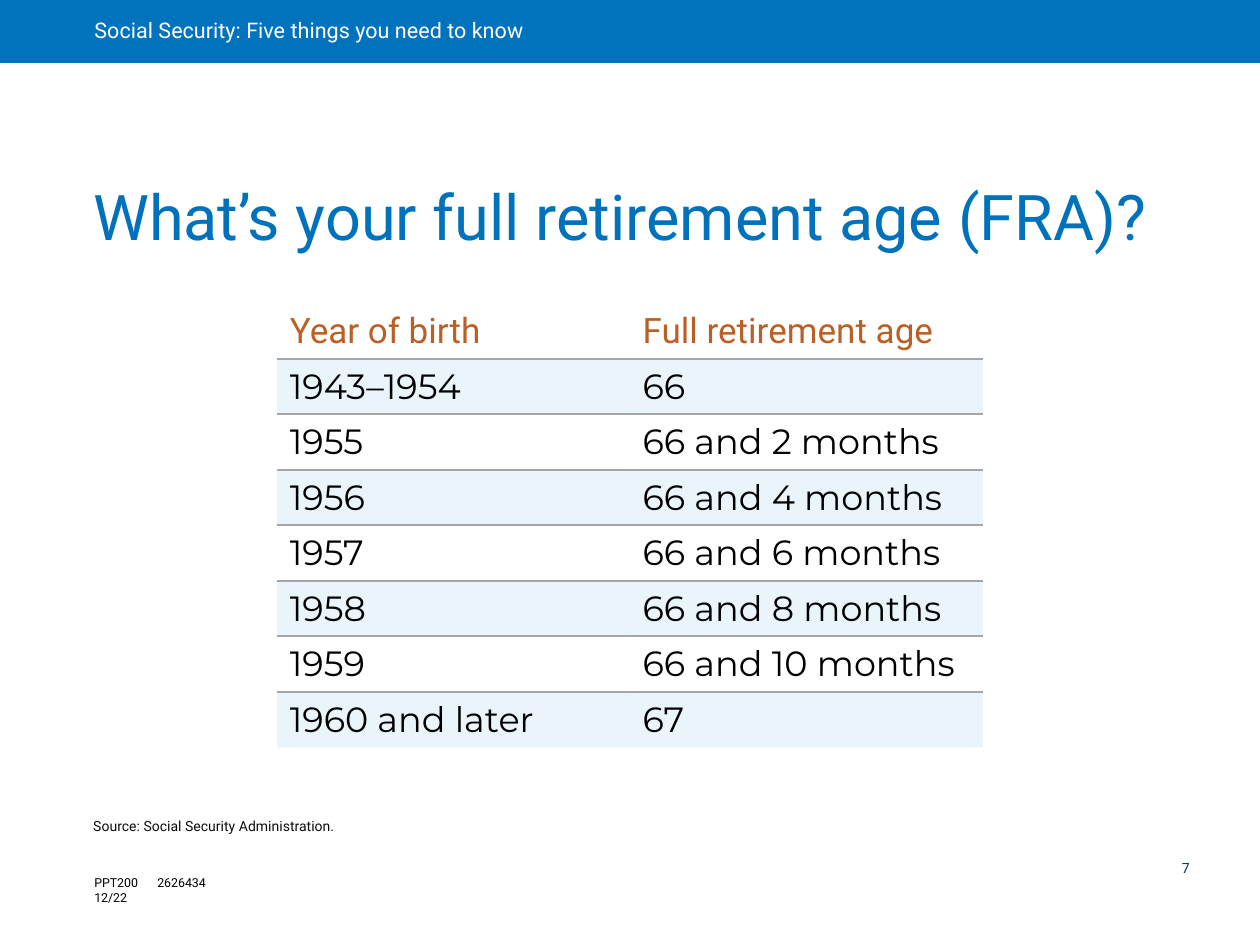
"""Build the full retirement age slide."""
from dataclasses import dataclass, field

from lxml import etree
from pptx import Presentation
from pptx import util as u
from pptx.dml.color import RGBColor
from pptx.enum import shapes, text
from pptx.oxml import ns

Pt = u.Pt
BAR = RGBColor(0x00, 0x73, 0xBC)
TITLE = RGBColor(0x00, 0x72, 0xBC)
HEADING = RGBColor(0xBA, 0x60, 0x27)
NAVY = RGBColor(0x00, 0x34, 0x63)
INK = RGBColor(0x0C, 0x0C, 0x0C)
BLACK = RGBColor(0x00, 0x00, 0x00)
WHITE = RGBColor(0xFF, 0xFF, 0xFF)
BAND = RGBColor(0x96, 0xCE, 0xEE)
RULE = RGBColor(0xA5, 0xA6, 0xA5)
NO_STYLE = "{2D5ABB26-0587-4C30-8999-92F81FD0307C}"

ROWS = [
    ("Year of birth", "Full retirement age"),
    ("1943–1954", "66"),
    ("1955", "66 and 2 months"),
    ("1956", "66 and 4 months"),
    ("1957", "66 and 6 months"),
    ("1958", "66 and 8 months"),
    ("1959", "66 and 10 months"),
    ("1960 and later", "67"),
]


@dataclass
class Block:
    lines: list[str]
    box: tuple[float, float, float, float]
    insets: tuple[float, float, float, float]
    size: float
    color: RGBColor
    anchor: text.MSO_ANCHOR = text.MSO_ANCHOR.TOP
    spacing: float = 1.0
    tabs: list[float] = field(default_factory=list)


def add_node(parent, tag: str, **attrs):
    return etree.SubElement(parent, ns.qn(tag), attrs)


def set_attrs(obj, fmt: dict) -> None:
    for name, value in fmt.items():
        setattr(obj, name, value)


def write(p, line: str, size: float, color: RGBColor, face: str = "Roboto") -> None:
    r = p.add_run()
    r.text = line
    set_attrs(r.font, {"name": face, "size": Pt(size), "bold": False})
    r.font.color.rgb = color


def fill_block(sp, block: Block) -> None:
    set_attrs(sp, dict(zip(("left", "top", "width", "height"), map(Pt, block.box))))
    tf = sp.text_frame
    sides = ("margin_left", "margin_top", "margin_right", "margin_bottom")
    set_attrs(tf, dict(zip(sides, map(Pt, block.insets))))
    set_attrs(tf, {"word_wrap": True, "auto_size": text.MSO_AUTO_SIZE.NONE,
                   "vertical_anchor": block.anchor})
    for i, line in enumerate(block.lines):
        p = tf.add_paragraph() if i else tf.paragraphs[0]
        pPr = p._p.get_or_add_pPr()
        set_attrs(p, {"alignment": text.PP_ALIGN.LEFT, "space_before": Pt(0),
                      "line_spacing": block.spacing})
        set_attrs_xml = {"marL": "0", "indent": "0"}
        pPr.attrib.update(set_attrs_xml)
        add_node(pPr, "a:buNone")
        if block.tabs:
            tabs = add_node(pPr, "a:tabLst")
            for pos in block.tabs:
                add_node(tabs, "a:tab", pos=str(Pt(pos)), algn="l")
        write(p, line, block.size, block.color)


def format_cell(cell, line: str, row: int, last: int) -> None:
    face, color = ("Montserrat", BLACK) if row else ("Roboto", HEADING)
    p = cell.text_frame.paragraphs[0]
    p.alignment = text.PP_ALIGN.LEFT
    write(p, line, 20, color, face)
    tcPr = cell._tc.get_or_add_tcPr()
    if row % 2:
        cell.fill.solid()
        cell.fill.fore_color.rgb = BAND
        add_node(tcPr.find(".//" + ns.qn("a:srgbClr")), "a:alpha", val="20000")
    else:
        cell.fill.background()
    if row < last:
        ln = add_node(tcPr, "a:lnB", w=str(Pt(1.5)))
        add_node(add_node(ln, "a:solidFill"), "a:srgbClr", val=str(RULE))
        tcPr.insert(0, ln)


def add_age_table(s) -> None:
    frame = s.shapes.add_table(len(ROWS), 2, Pt(158.4), Pt(174.24), Pt(403.2), Pt(236))
    tbl = frame.table
    set_attrs(tbl, {"first_row": False, "horz_banding": False})
    tbl._tbl.tblPr.find(ns.qn("a:tableStyleId")).text = NO_STYLE
    for i, row in enumerate(ROWS):
        tbl.rows[i].height = Pt(29.5)
        for j, line in enumerate(row):
            format_cell(tbl.cell(i, j), line, i, len(ROWS) - 1)


def main() -> None:
    prs = Presentation()
    set_attrs(prs, {"slide_width": Pt(720), "slide_height": Pt(540)})
    s = prs.slides.add_slide(prs.slide_layouts[1])

    bar = s.shapes.add_shape(shapes.MSO_SHAPE.RECTANGLE, 0, 0, Pt(720), Pt(36))
    bar.shadow.inherit = False
    bar.fill.solid()
    bar.fill.fore_color.rgb = BAR
    bar.line.fill.background()

    middle, bottom = text.MSO_ANCHOR.MIDDLE, text.MSO_ANCHOR.BOTTOM
    inset = (7.92, 4.32, 7.92, 4.32)
    fill_block(bar, Block(["Social Security: Five things you need to know"],
                          (0, 0, 720, 36), (54, 0, 15.84, 0), 12.3, WHITE, middle, 0.9))
    fill_block(s.shapes.title, Block(["What’s your full retirement age (FRA)?"],
                                     (45.36, 128.16, 620.64, 21.6), inset,
                                     36, TITLE, bottom, 0.9))
    fill_block(s.placeholders[1], Block(["Source: Social Security Administration."],
                                        (45.36, 465.12, 620.64, 15.84), inset,
                                        8, INK, bottom, 1.1))
    for block in (
        Block(["PPT200\t2626434", "12/22"], (46.8, 496.5, 83.5, 24),
              (7.2, 3.6, 7.2, 3.6), 7.1, BLACK, tabs=[28.5]),
        Block(["7"], (666, 489.6, 36, 15.12), (9.36, 2.88, 2.88, 2.88),
              8, NAVY, spacing=0.9),
    ):
        fill_block(s.shapes.add_textbox(0, 0, 0, 0), block)
    add_age_table(s)
    prs.save("out.pptx")


if __name__ == "__main__":
    main()
